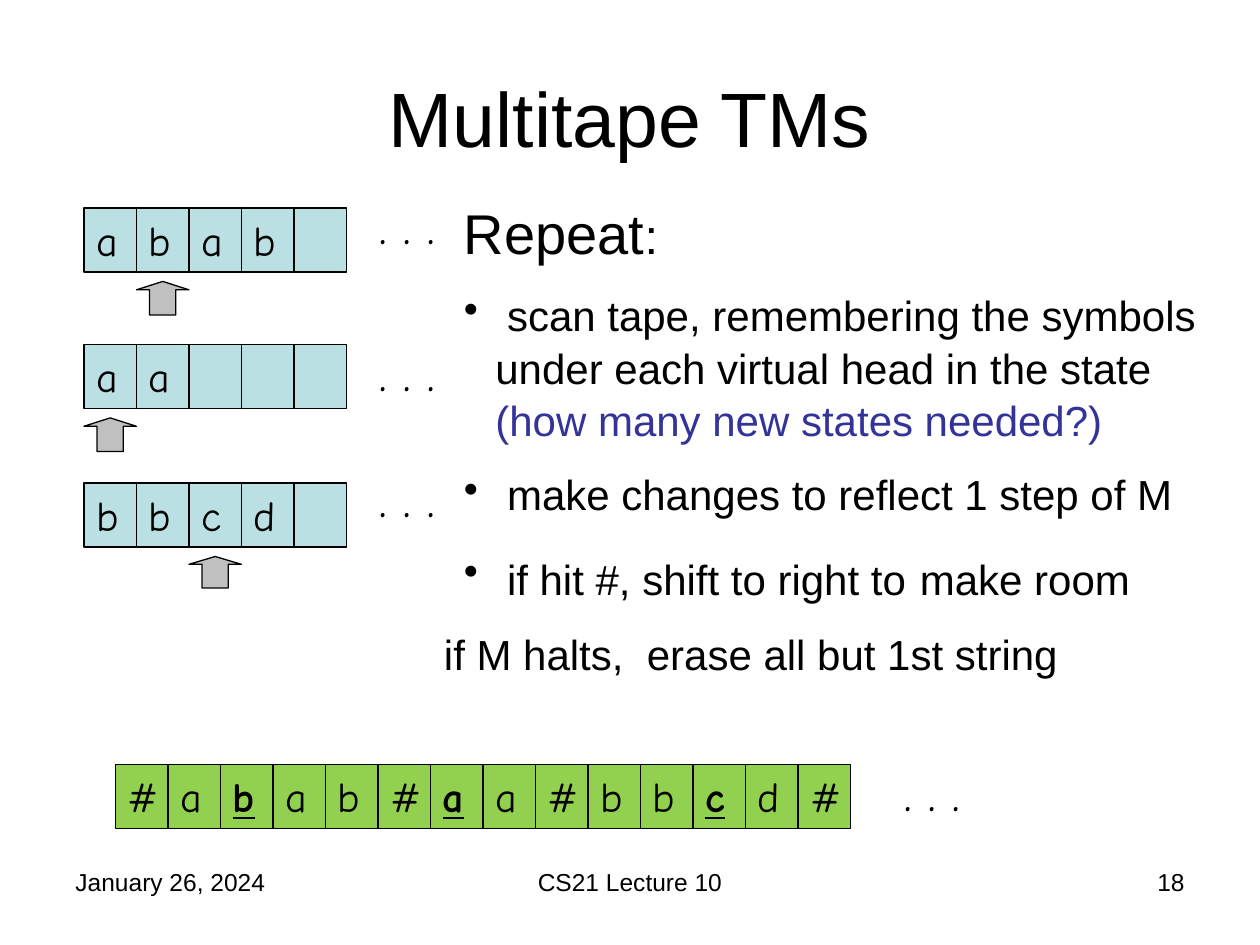
"""Builds the slide on simulating a multitape Turing machine with one tape."""
from dataclasses import dataclass

from lxml.etree import SubElement
from pptx import Presentation
from pptx.dml.color import RGBColor
from pptx.enum.shapes import MSO_SHAPE
from pptx.enum.text import MSO_ANCHOR, PP_ALIGN
from pptx.oxml.ns import qn
from pptx.util import Emu, Pt

PX = 7620
CELL_W, CELL_H = 50, 61
DOTS = ". . ."


@dataclass(frozen=True)
class Theme:
    ink: str = "000000"
    accent: str = "333399"
    tape: str = "BBE0E3"
    single_tape: str = "92D050"
    head: str = "C0C0C0"
    sans: str = "Arial"
    hand: str = "Comic Neue"
    title: int = 44
    heading: int = 32
    dots: int = 28
    body: int = 24
    footer: int = 14
    line: float = 0.75


def px(n):
    return Emu(n * PX)


class Deck:
    def __init__(self, prs, theme):
        self.theme = theme
        self.s = prs.slides.add_slide(prs.slide_layouts[6])

    def run(self, p, text, size, font=None, color=None, marked=False):
        r = p.add_run()
        r.text = text
        r.font.name = font or self.theme.sans
        r.font.size = Pt(size)
        r.font.color.rgb = RGBColor.from_string(color or self.theme.ink)
        if marked:
            r.font.bold = r.font.underline = True

    def box(self, x, y, w, h, anchor=MSO_ANCHOR.TOP):
        tf = self.s.shapes.add_textbox(px(x), px(y), px(w), px(h)).text_frame
        tf.word_wrap = True
        tf.vertical_anchor = anchor
        return tf

    def label(self, x, y, w, h, text, size, font=None,
              align=PP_ALIGN.LEFT, anchor=MSO_ANCHOR.TOP):
        p = self.box(x, y, w, h, anchor).paragraphs[0]
        p.alignment = align
        self.run(p, text, size, font)

    def shape(self, kind, x, y, w, h, fill):
        sp = self.s.shapes.add_shape(kind, px(x), px(y), px(w), px(h))
        sp.shadow.inherit = False
        sp.fill.solid()
        sp.fill.fore_color.rgb = RGBColor.from_string(fill)
        sp.line.color.rgb = RGBColor.from_string(self.theme.ink)
        sp.line.width = Pt(self.theme.line)
        return sp

    def head(self, x, y, h):
        sp = self.shape(MSO_SHAPE.UP_ARROW, x, y, CELL_W, h, self.theme.head)
        sp.adjustments[0], sp.adjustments[1] = 0.5, 0.25

    def tape(self, x, y, symbols, fill, marked=()):
        for i, symbol in enumerate(symbols):
            sp = self.shape(MSO_SHAPE.RECTANGLE, x + i * CELL_W, y, CELL_W, CELL_H, fill)
            if symbol != " ":
                tf = sp.text_frame
                tf.word_wrap = True
                tf.vertical_anchor = MSO_ANCHOR.TOP
                p = tf.paragraphs[0]
                p.alignment = PP_ALIGN.LEFT
                self.run(p, symbol, self.theme.body, self.theme.hand, marked=i in marked)

    def dots(self, x, y, w):
        self.label(x, y, w, 68, DOTS, self.theme.dots, self.theme.hand)

    def paragraph(self, p, runs, before, left, bullet=False):
        p.line_spacing = 1.05
        p.space_before = Pt(before)
        pPr = p._p.get_or_add_pPr()
        pPr.set("marL", str(px(left)))
        pPr.set("indent", str(px(-30 if bullet else 0)))
        if bullet:
            p.level = 1
            SubElement(pPr, qn("a:buChar")).set("char", "•")
        for text, size, color in runs:
            self.run(p, text, size, color=color)


def main():
    t = Theme()
    prs = Presentation()
    prs.slide_width, prs.slide_height = px(1200), px(900)
    d = Deck(prs, t)

    d.label(60, 36, 1080, 150, "Multitape TMs", t.title,
            align=PP_ALIGN.CENTER, anchor=MSO_ANCHOR.MIDDLE)

    tapes = [
        ("abab ", 198, 1, 268, 32, 180),
        ("aa   ", 328, 0, 398, 32, 320),
        ("bbcd ", 460, 2, 530, 30, 440),
    ]
    for symbols, y, head, head_y, head_h, dots_y in tapes:
        d.tape(80, y, symbols, t.tape)
        d.head(80 + head * CELL_W, head_y, head_h)
        d.dots(350, dots_y, 190)

    d.tape(110, 728, "#abab#aa#bbcd#", t.single_tape, marked={2, 6, 11})
    d.dots(850, 720, 110)

    steps = [
        ([("Repeat", t.heading, t.ink), (":", t.dots, t.ink)], 0, 30, False),
        ([(" scan tape, remembering the symbols under each virtual head in the state ",
           t.body, t.ink),
          ("(how many new states needed?)", t.body, t.accent)], 12, 60, True),
        ([(" make changes to reflect 1 step of M", t.body, t.ink)], 12, 60, True),
        ([(" if hit #, shift to right to", t.body, t.ink), (" ", t.dots, t.ink),
          ("make room", t.body, t.ink)], 14, 60, True),
        ([("if M halts,  erase all but 1st string", t.body, t.ink)], 12, 11, False),
    ]
    tf = d.box(400, 180, 770, 472)
    for i, step in enumerate(steps):
        d.paragraph(tf.add_paragraph() if i else tf.paragraphs[0], *step)

    footers = [
        (60, 280, "January 26, 2024", PP_ALIGN.LEFT),
        (410, 380, "CS21 Lecture 10", PP_ALIGN.CENTER),
        (860, 280, "18", PP_ALIGN.RIGHT),
    ]
    for x, w, text, align in footers:
        d.label(x, 820, w, 62, text, t.footer, align=align)

    prs.save("out.pptx")


if __name__ == "__main__":
    main()
